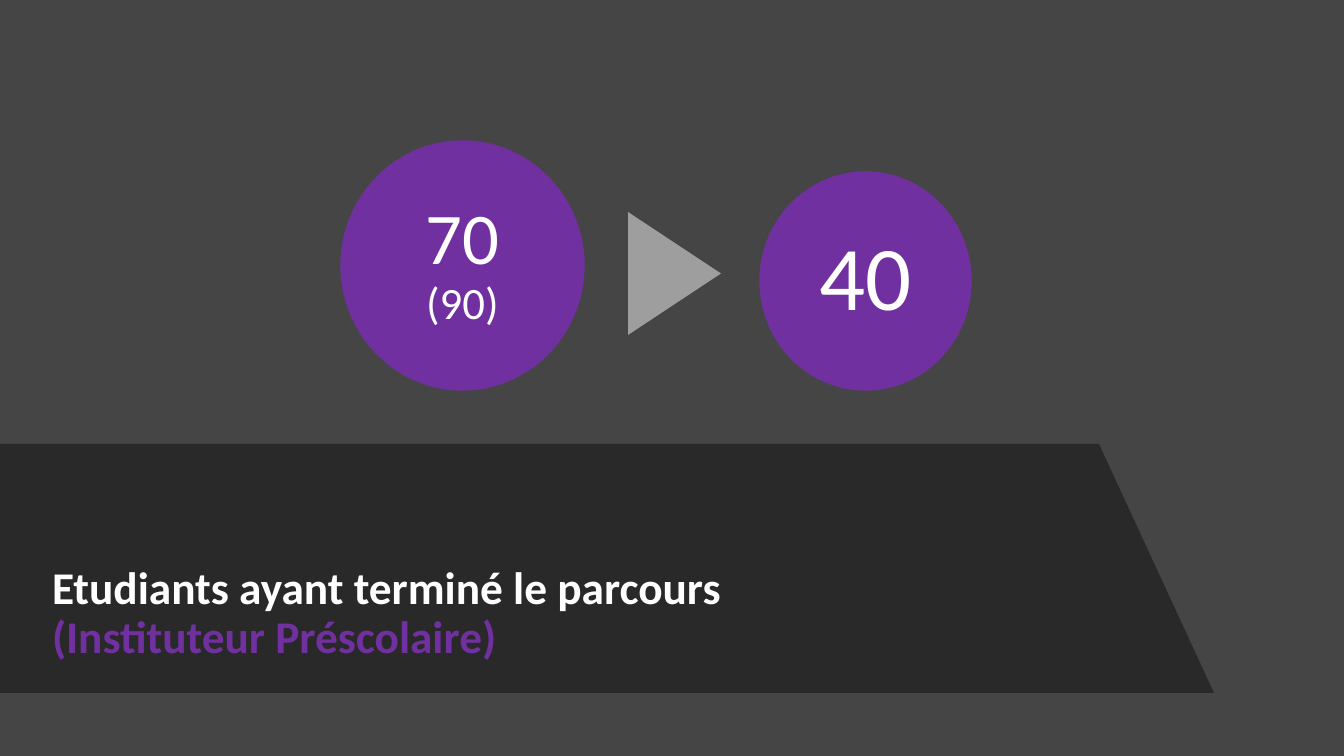
from dataclasses import dataclass

from lxml import etree
from pptx import Presentation
from pptx.dml.color import RGBColor
from pptx.enum.shapes import MSO_SHAPE
from pptx.enum.text import MSO_ANCHOR, MSO_AUTO_SIZE, PP_ALIGN
from pptx.oxml.ns import qn
from pptx.util import Pt

OVAL, TRIANGLE = MSO_SHAPE.OVAL, MSO_SHAPE.ISOSCELES_TRIANGLE
MIDDLE, LEFT, CENTER = MSO_ANCHOR.MIDDLE, PP_ALIGN.LEFT, PP_ALIGN.CENTER
NO_FIT = MSO_AUTO_SIZE.NONE


@dataclass(frozen=True)
class Theme:
    font: str = "Calibri"
    background: str = "454545"
    band: str = "262626"
    band_opacity: int = 88
    accent: str = "7030A0"
    arrow: str = "9E9E9E"
    text: str = "FFFFFF"
    title: float = 32.4
    start: int = 52
    note: int = 32
    end: int = 65
    spacing: float = 0.9


T = Theme()
W, H = 1344, 756
SCALE = 12192000 / W

TITLE = [
    ("Etudiants ayant terminé le parcours", T.title, T.text),
    ("(Instituteur Préscolaire)", T.title, T.accent),
]
TITLE_BOX = (42, 572, 1021, 84)
BAND = [(0, 444), (1099, 444), (1214, 693), (0, 693)]
CIRCLES = [
    ((341, 141, 243, 249), 7, [("70", T.start, T.text), ("(90)", T.note, T.text)]),
    ((760, 172, 211, 218), 9, [("40", T.end, T.text)]),
]
ARROW_BOX = (613, 227, 123, 93)


def px(n):
    return round(n * SCALE)


def color(value):
    return RGBColor.from_string(value)


def paint(shape, fill):
    shape.shadow.inherit = False
    shape.fill.solid()
    shape.fill.fore_color.rgb = color(fill)
    shape.line.fill.background()


def write(tf, lines, align, bold=False):
    tf.word_wrap = True
    tf.auto_size = NO_FIT
    tf.vertical_anchor = MIDDLE
    p = tf.paragraphs[0]
    p.alignment = align
    p.line_spacing = T.spacing
    for i, (text, size, fill) in enumerate(lines):
        if i:
            p.add_line_break()
        r = p.add_run()
        r.text = text
        r.font.name = T.font
        r.font.size = Pt(size)
        r.font.bold = bold
        r.font.color.rgb = color(fill)


def add_band(s):
    builder = s.shapes.build_freeform(*BAND[0], scale=SCALE)
    builder.add_line_segments(BAND[1:], close=True)
    sp = builder.convert_to_shape()
    paint(sp, T.band)
    rgb = sp.fill._xPr.find(f"{qn('a:solidFill')}/{qn('a:srgbClr')}")
    etree.SubElement(rgb, qn("a:alpha"), val=str(T.band_opacity * 1000))
    return sp


def add_circle(s, box, inset, lines):
    sp = s.shapes.add_shape(OVAL, *map(px, box))
    paint(sp, T.accent)
    sp.line.color.rgb = color(T.accent)
    sp.line.width = Pt(1)
    tf = sp.text_frame
    tf.margin_left = tf.margin_right = px(inset)
    tf.margin_top = tf.margin_bottom = px(inset)
    write(tf, lines, CENTER)


def main():
    prs = Presentation()
    prs.slide_width, prs.slide_height = px(W), px(H)
    s = prs.slides.add_slide(prs.slide_layouts[5])
    s.background.fill.solid()
    s.background.fill.fore_color.rgb = color(T.background)

    title = s.shapes.title
    title.left, title.top, title.width, title.height = map(px, TITLE_BOX)
    write(title.text_frame, TITLE, LEFT, bold=True)
    band = add_band(s)
    title._element.addprevious(band._element)

    for box, inset, lines in CIRCLES:
        add_circle(s, box, inset, lines)
    arrow = s.shapes.add_shape(TRIANGLE, *map(px, ARROW_BOX))
    arrow.rotation = 90
    paint(arrow, T.arrow)
    prs.save("out.pptx")


if __name__ == "__main__":
    main()
